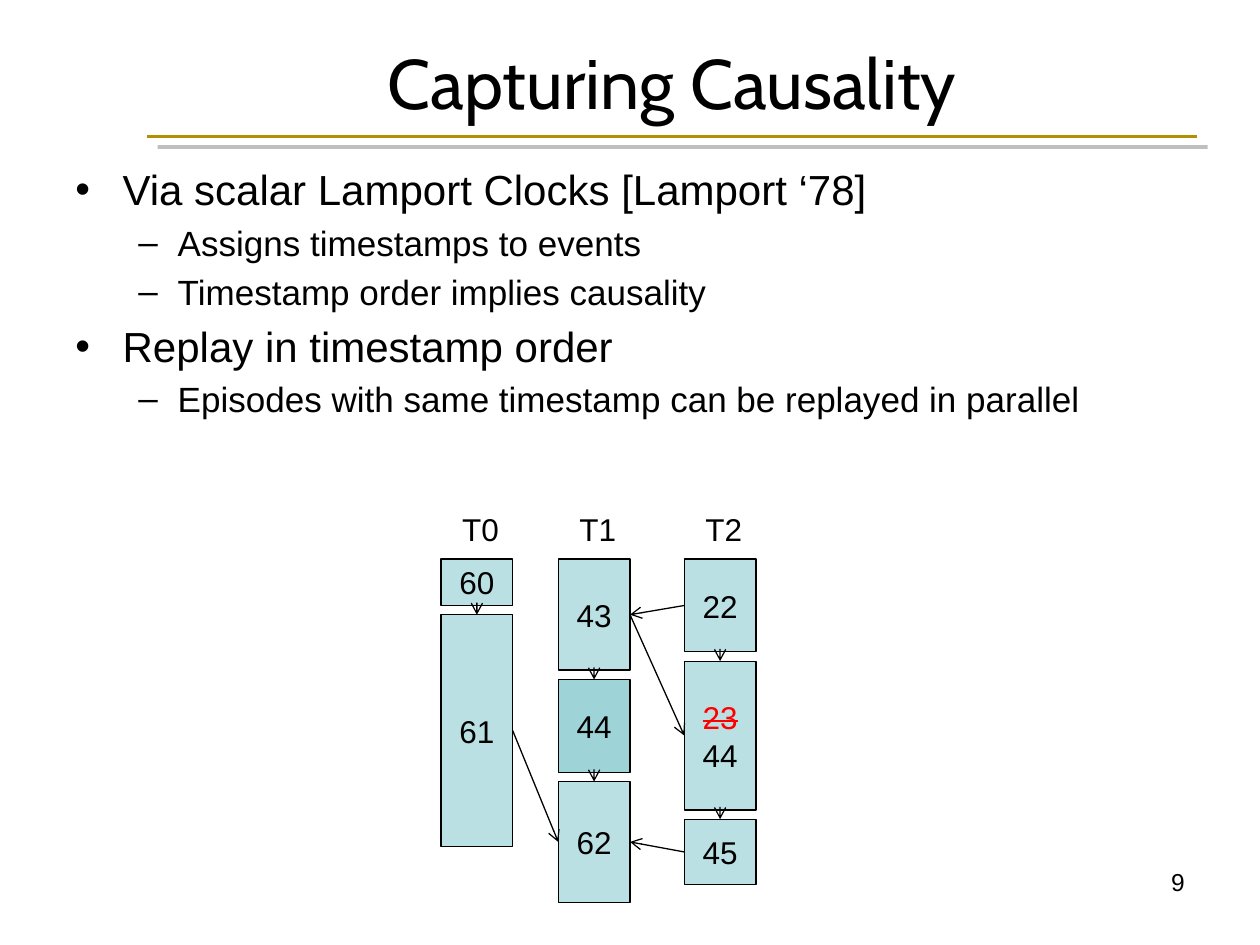
import pptx
import pptx.util
import pptx.dml.color
import pptx.enum.shapes
import pptx.enum.text
import pptx.oxml
import pptx.oxml.ns
from lxml import etree

Pt = pptx.util.Pt
Align = pptx.enum.text.PP_ALIGN
Anchor = pptx.enum.text.MSO_ANCHOR

# Content
TITLE = "Capturing Causality"
PAGE_NUMBER = "9"
BULLETS = [
    (0, "Via scalar Lamport Clocks [Lamport ‘78]"),
    (1, "Assigns timestamps to events"),
    (1, "Timestamp order implies causality"),
    (0, "Replay in timestamp order"),
    (1, "Episodes with same timestamp can be replayed in parallel"),
]
# Thread: name, left, episodes as (key, timestamps, height)
THREADS = [
    ("T0", 252, [("a1", ["60"], 26.5), ("a2", ["61"], 132.5)]),
    ("T1", 319, [("b1", ["43"], 63.5), ("b2", ["44"], 53), ("b3", ["62"], 69)]),
    ("T2", 391, [("c1", ["22"], 53), ("c2", ["23", "44"], 85), ("c3", ["45"], 37.5)]),
]
REPLACED = "23"
DARK_EPISODE = "b2"
TOP, BOTTOM, LEFT, RIGHT = 0, 2, 1, 3
MESSAGES = [
    ("c1", LEFT, "b1", RIGHT),
    ("b1", RIGHT, "c2", LEFT),
    ("c3", LEFT, "b3", RIGHT),
    ("a2", RIGHT, "b3", LEFT),
]

THEME = {
    "ink": "000000", "rule": "B19003", "rule_shadow": "808080",
    "episode": "BBE0E3", "dark_episode": "9ED3D7", "replaced": "FF0000",
    "title_font": "Cabin", "body_font": "Arial",
    "title_size": 40, "level_sizes": [24, 20], "label_size": 18, "number_size": 14,
}
# Bullet mark, text indent and hanging indent of each level
LEVELS = [("•", 27, -27), ("–", 58.5, -22.5)]
EPISODE_TOP, EPISODE_WIDTH, EPISODE_GAP = 319.5, 41, 5.3


def rgb(name):
    return pptx.dml.color.RGBColor.from_string(THEME[name])


def apply(target, values):
    for name, value in values.items():
        setattr(target, name, value)


def add_span(para, text, size, font="body_font", color="ink"):
    span = para.add_run()
    span.text = text
    apply(span.font, {"size": Pt(size), "name": THEME[font]})
    span.font.color.rgb = rgb(color)
    return span


def add_text(page, place, text, size, font="body_font", align=Align.LEFT, **frame):
    box = page.shapes.add_textbox(*map(Pt, place))
    apply(box.text_frame, {"word_wrap": True, **frame})
    para = box.text_frame.paragraphs[0]
    para.alignment = align
    add_span(para, text, size, font)


def add_line(page, start, end, color, width):
    line = page.shapes.add_connector(
        pptx.enum.shapes.MSO_CONNECTOR.STRAIGHT, *map(Pt, start + end))
    line.line.color.rgb = rgb(color)
    line.line.width = Pt(width)
    effects = etree.SubElement(line._element.spPr, pptx.oxml.ns.qn("a:effectLst"))
    return line, effects


def add_bullets(page):
    box = page.shapes.add_textbox(*map(Pt, (36, 90, 642, 168)))
    frame = box.text_frame
    frame.word_wrap = True
    for index, (level, text) in enumerate(BULLETS):
        para = frame.add_paragraph() if index else frame.paragraphs[0]
        mark, indent, hanging = LEVELS[level]
        size = THEME["level_sizes"][level]
        apply(para, {"level": level, "space_before": Pt(size * 0.2 if index else 0)})
        properties = para._p.get_or_add_pPr()
        properties.set("marL", str(Pt(indent)))
        properties.set("indent", str(Pt(hanging)))
        font = etree.SubElement(properties, pptx.oxml.ns.qn("a:buFont"))
        font.set("typeface", THEME["body_font"])
        etree.SubElement(properties, pptx.oxml.ns.qn("a:buChar")).set("char", mark)
        add_span(para, text, size)


def add_episode(page, key, stamps, left, top, height):
    box = page.shapes.add_shape(
        pptx.enum.shapes.MSO_SHAPE.RECTANGLE,
        *map(Pt, (left, top, EPISODE_WIDTH, height)))
    box.shadow.inherit = False
    box.fill.solid()
    box.fill.fore_color.rgb = rgb("dark_episode" if key == DARK_EPISODE else "episode")
    box.line.color.rgb = rgb("ink")
    box.line.width = Pt(0.75)
    frame = box.text_frame
    apply(frame, {"word_wrap": False, "vertical_anchor": Anchor.MIDDLE})
    for index, stamp in enumerate(stamps):
        para = frame.add_paragraph() if index else frame.paragraphs[0]
        para.alignment = Align.CENTER
        replaced = stamp == REPLACED
        span = add_span(para, stamp, THEME["label_size"],
                        color="replaced" if replaced else "ink")
        if replaced:
            span._r.get_or_add_rPr().set("strike", "sngStrike")
    return box


def add_arrow(page, source, source_side, target, target_side):
    arrow, _ = add_line(page, (0, 0), (0, 0), "ink", 0.75)
    arrow.begin_connect(source, source_side)
    arrow.end_connect(target, target_side)
    outline = arrow.line._get_or_add_ln()
    etree.SubElement(outline, pptx.oxml.ns.qn("a:tailEnd")).set("type", "arrow")


def main():
    deck = pptx.Presentation()
    apply(deck, {"slide_width": Pt(720), "slide_height": Pt(540)})
    page = deck.slides.add_slide(deck.slide_layouts[6])

    # Rule under the title, with its shadow
    _, effects = add_line(page, (84, 78), (684, 78), "rule", 2.25)
    effects.append(pptx.oxml.parse_xml(
        f'<a:outerShdw {pptx.oxml.ns.nsdecls("a")} dist="{Pt(8.5)}" dir="2700000" '
        f'algn="ctr" rotWithShape="0"><a:srgbClr val="{THEME["rule_shadow"]}">'
        '<a:alpha val="50000"/></a:srgbClr></a:outerShdw>'))

    # Title, bullets and page number
    add_text(page, (84, 21.5, 600, 50.5), TITLE, THEME["title_size"], "title_font",
             Align.CENTER, vertical_anchor=Anchor.MIDDLE)
    add_bullets(page)
    add_text(page, (516, 492, 168, 37.5), PAGE_NUMBER, THEME["number_size"],
             align=Align.RIGHT)

    # Threads: a label above a stack of episodes
    episodes = {}
    for name, left, stack in THREADS:
        add_text(page, (left + 5, 288, 36, 29), name, THEME["label_size"],
                 word_wrap=False)
        top = EPISODE_TOP
        for key, stamps, height in stack:
            episodes[key] = add_episode(page, key, stamps, left, top, height)
            top += height + EPISODE_GAP

    # Arrows down each thread and between threads
    steps = [(upper[0], BOTTOM, lower[0], TOP)
             for _, _, stack in THREADS for upper, lower in zip(stack, stack[1:])]
    for source, source_side, target, target_side in MESSAGES + steps:
        add_arrow(page, episodes[source], source_side, episodes[target], target_side)

    deck.save("out.pptx")


if __name__ == "__main__":
    main()
